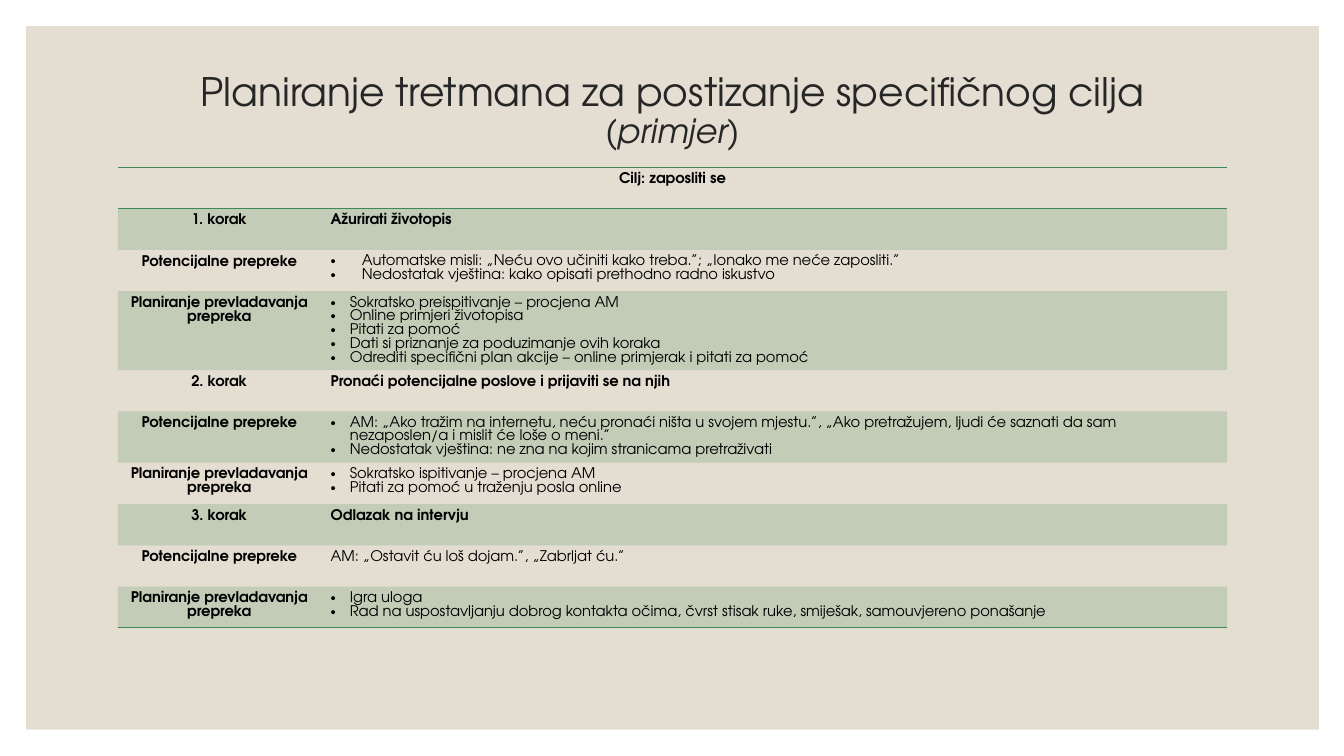
import pptx
import pptx.dml.color
import pptx.enum.shapes
import pptx.enum.text
import pptx.oxml
import pptx.oxml.ns
import pptx.util
from pptx.util import Inches

FONT = "TeX Gyre Adventor"
GREEN = "3E8853"
CENTER = pptx.enum.text.PP_ALIGN.CENTER
LEFT = pptx.enum.text.PP_ALIGN.LEFT
NO_STYLE = "{2D5ABB26-0587-4C30-8999-92F81FD0307C}"
OBSTACLES = "Potencijalne prepreke"
SOLUTIONS = "Planiranje prevladavanja prepreka"

STEPS = [
    ("Ažurirati životopis",
     ["Automatske misli: „Neću ovo učiniti kako treba.”; „Ionako me neće zaposliti.”",
      "Nedostatak vještina: kako opisati prethodno radno iskustvo"], 0.31,
     ["Sokratsko preispitivanje – procjena AM",
      "Online primjeri životopisa",
      "Pitati za pomoć",
      "Dati si priznanje za poduzimanje ovih koraka",
      "Odrediti specifični plan akcije – online primjerak i pitati za pomoć"]),
    ("Pronaći potencijalne poslove i prijaviti se na njih",
     ["AM: „Ako tražim na internetu, neću pronaći ništa u svojem mjestu.”, „Ako pretražujem, "
      "ljudi će saznati da sam nezaposlen/a i mislit će loše o meni.”",
      "Nedostatak vještina: ne zna na kojim stranicama pretraživati"], 0.19,
     ["Sokratsko ispitivanje – procjena AM",
      "Pitati za pomoć u traženju posla online"]),
    ("Odlazak na intervju",
     ["AM: „Ostavit ću loš dojam.”, „Zabrljat ću.”"], 0,
     ["Igra uloga",
      "Rad na uspostavljanju dobrog kontakta očima, čvrst stisak ruke, smiješak, "
      "samouvjereno ponašanje"]),
]


def color(value):
    return pptx.dml.color.RGBColor.from_string(value)


def format_run(run, size, value, bold=False, italic=False):
    run.font.name = FONT
    run.font.size = pptx.util.Pt(size)
    run.font.color.rgb = color(value)
    run.font.bold = bold
    run.font.italic = italic


def add_bullet(paragraph, indent):
    properties = paragraph._p.get_or_add_pPr()
    properties.set("marL", str(Inches(indent)))
    properties.set("indent", str(-Inches(indent)))
    for tag, name, value in (("a:buFont", "typeface", "Arial"), ("a:buChar", "char", "•")):
        bullet = pptx.oxml.parse_xml(f"<{tag} {pptx.oxml.ns.nsdecls('a')}/>")
        bullet.set(name, value)
        properties.append(bullet)


def fill_cell(cell, lines, alignment, bold, indent=0):
    cell.text_frame.text = "\n".join(lines)
    for paragraph in cell.text_frame.paragraphs:
        paragraph.alignment = alignment
        paragraph.line_spacing = pptx.util.Pt(9.8)
        if indent:
            add_bullet(paragraph, indent)
        for run in paragraph.runs:
            format_run(run, 10.5, "000000", bold)


def shade_cell(cell, shaded):
    if not shaded:
        cell.fill.background()
        return
    cell.fill.solid()
    cell.fill.fore_color.rgb = color(GREEN)
    shade = cell._tc.tcPr.find(".//" + pptx.oxml.ns.qn("a:srgbClr"))
    shade.append(pptx.oxml.parse_xml(
        f'<a:alpha {pptx.oxml.ns.nsdecls("a")} val="20000"/>'))


def add_borders(cell, sides):
    for position, side in enumerate(sides):
        border = pptx.oxml.parse_xml(
            f'<a:ln{side} {pptx.oxml.ns.nsdecls("a")} w="12700"><a:solidFill>'
            f'<a:srgbClr val="{GREEN}"/></a:solidFill></a:ln{side}>')
        cell._tc.get_or_add_tcPr().insert(position, border)


def add_panel(slide, left, top, width, height):
    panel = slide.shapes.add_shape(
        pptx.enum.shapes.MSO_SHAPE.RECTANGLE, left, top, width, height)
    panel.shadow.inherit = False
    panel.fill.solid()
    panel.fill.fore_color.rgb = color("E3DED1")
    panel.line.fill.background()
    slide.shapes.title.element.addprevious(panel.element)


def place_title(slide, left, top, width, height):
    title = slide.shapes.title
    title.left, title.top, title.width, title.height = left, top, width, height
    frame = title.text_frame
    frame.text = "Planiranje tretmana za postizanje specifičnog cilja\v(primjer)"
    frame.vertical_anchor = pptx.enum.text.MSO_ANCHOR.MIDDLE
    frame.word_wrap = True
    paragraph = frame.paragraphs[0]
    paragraph.alignment = CENTER
    paragraph.line_spacing = 0.9
    heading, example = paragraph.runs
    format_run(heading, 28, "262626")
    format_run(example, 24, "262626", italic=True)


def add_plan(slide, left, top, width, row_height):
    row_count = 1 + 3 * len(STEPS)
    graphic = slide.shapes.add_table(row_count, 2, left, top, width, row_height * row_count)
    table = graphic.table
    table.first_row = table.horz_banding = False
    table._tbl.tblPr.find(pptx.oxml.ns.qn("a:tableStyleId")).text = NO_STYLE
    table.columns[0].width = Inches(2.01)
    table.columns[1].width = width - Inches(2.01)
    for row in table.rows:
        row.height = row_height

    table.cell(0, 0).merge(table.cell(0, 1))
    fill_cell(table.cell(0, 0), ["Cilj: zaposliti se"], CENTER, True)
    for number, (step, obstacles, indent, solutions) in enumerate(STEPS, 1):
        rows = [(f"{number}. korak", [step], True, 0),
                (OBSTACLES, obstacles, False, indent),
                (SOLUTIONS, solutions, False, 0.19)]
        for index, (label, lines, bold, bullet_indent) in enumerate(rows, 3 * number - 2):
            fill_cell(table.cell(index, 0), [label], CENTER, True)
            fill_cell(table.cell(index, 1), lines, LEFT, bold, bullet_indent)

    for index in range(row_count):
        for column in range(2):
            cell = table.cell(index, column)
            shade_cell(cell, index % 2 == 1)
            if index == 0:
                add_borders(cell, "TB")
            elif index == row_count - 1:
                add_borders(cell, "B")


def main():
    presentation = pptx.Presentation()
    presentation.slide_width = Inches(13.33)
    presentation.slide_height = Inches(7.5)
    slide = presentation.slides.add_slide(presentation.slide_layouts[5])
    add_panel(slide, Inches(0.26), Inches(0.26), Inches(12.82), Inches(6.98))
    place_title(slide, Inches(1.17), Inches(0.56), Inches(11), Inches(1.1))
    add_plan(slide, Inches(1.17), Inches(1.66), Inches(11), Inches(0.41))
    presentation.save("out.pptx")


if __name__ == "__main__":
    main()
